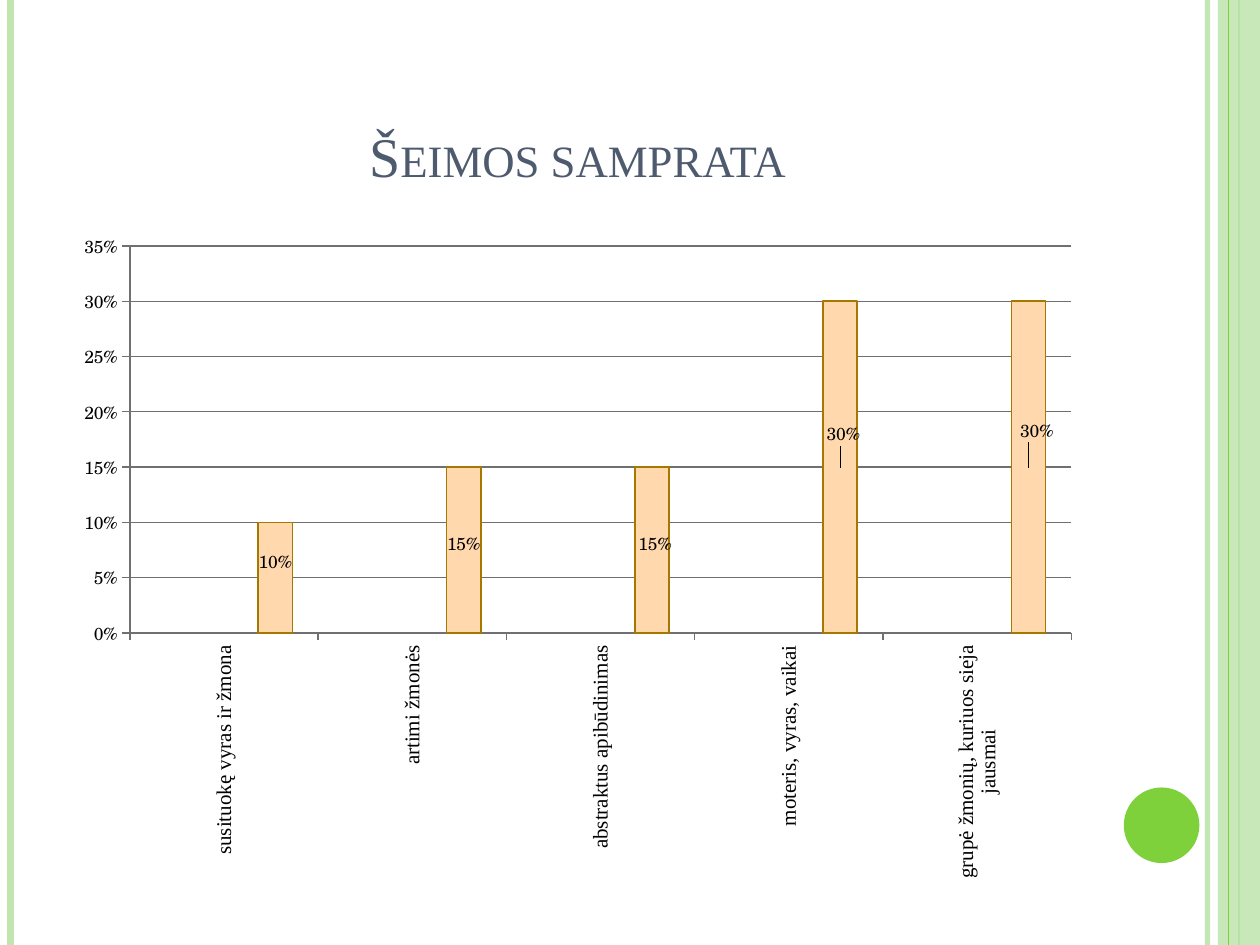
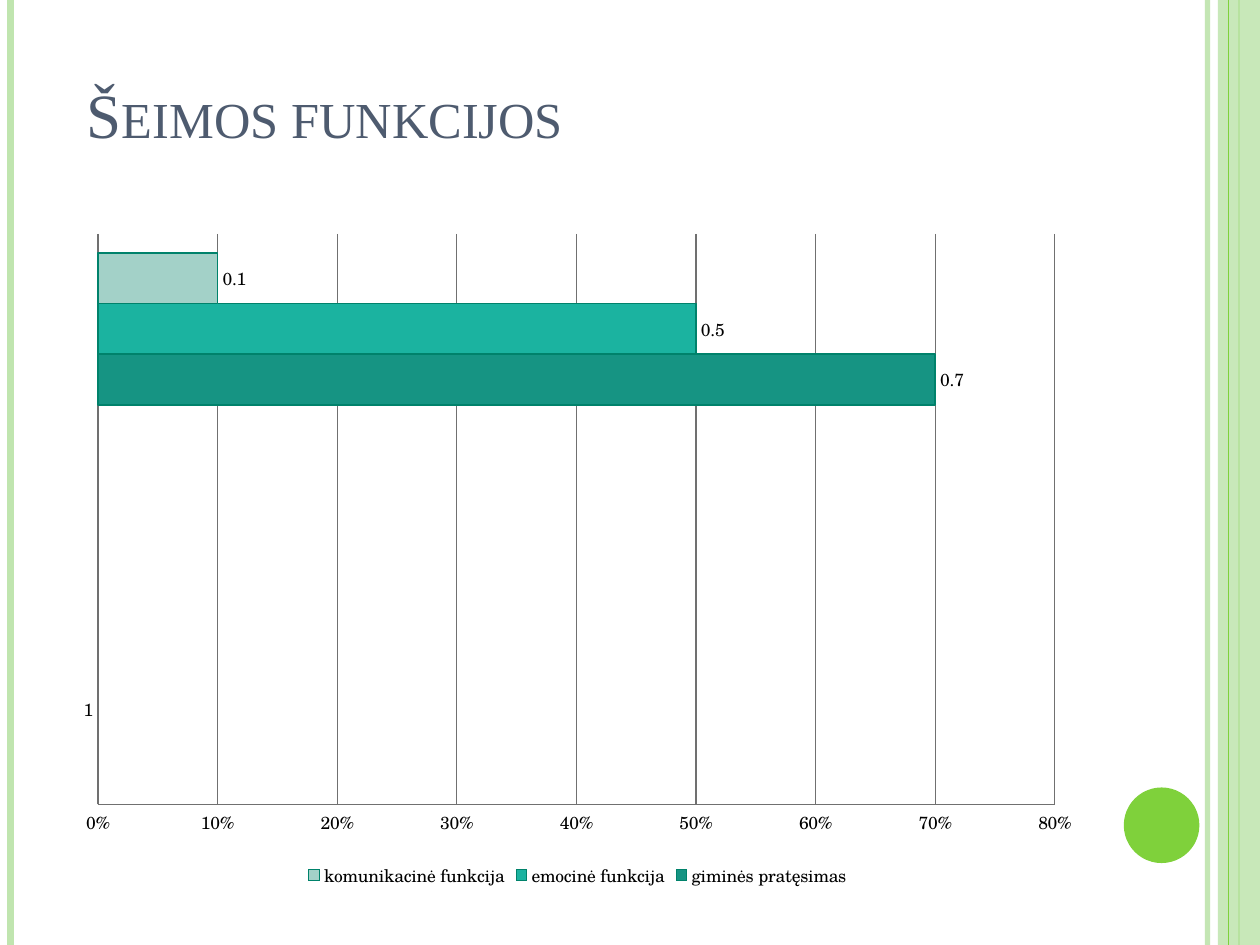
from lxml import etree
from pptx import Presentation
from pptx.chart.data import CategoryChartData
from pptx.dml.color import RGBColor
from pptx.enum.chart import XL_CHART_TYPE, XL_LABEL_POSITION, XL_LEGEND_POSITION, XL_TICK_MARK
from pptx.enum.shapes import MSO_CONNECTOR, MSO_SHAPE
from pptx.enum.text import MSO_ANCHOR, MSO_AUTO_SIZE, PP_ALIGN
from pptx.oxml.ns import qn
from pptx.util import Pt

COLUMNS, BARS = XL_CHART_TYPE.COLUMN_CLUSTERED, XL_CHART_TYPE.BAR_CLUSTERED
CENTER_LABEL, OUTER_LABEL = XL_LABEL_POSITION.CENTER, XL_LABEL_POSITION.OUTSIDE_END
BOTTOM_LEGEND = XL_LEGEND_POSITION.BOTTOM
NO_TICK, OUTER_TICK = XL_TICK_MARK.NONE, XL_TICK_MARK.OUTSIDE
STRAIGHT = MSO_CONNECTOR.STRAIGHT
RECTANGLE, OVAL = MSO_SHAPE.RECTANGLE, MSO_SHAPE.OVAL
BOTTOM, NO_FIT = MSO_ANCHOR.BOTTOM, MSO_AUTO_SIZE.NONE
LEFT, CENTER = PP_ALIGN.LEFT, PP_ALIGN.CENTER

COLORS = {
    "pale": "C0E5AF", "green": "7FD13B", "title": "4E5B6F", "text": "000000",
    "axis": "707070", "peach": "FFD8AD", "peach_edge": "A67800",
    "teal_dark": "169483", "teal": "1BB3A0", "teal_light": "A3D1C8",
    "teal_edge": "00826B",
}
TITLE_FONT, CHART_FONT = "Times New Roman", "TeX Gyre Schola"
PAGE_BOX = (0, 0, 720, 540)
CHART_BOX = (36, 126, 588, 384)


def color(name):
    return RGBColor.from_string(COLORS[name])


def apply(target, **values):
    for name, value in values.items():
        setattr(target, name, value)


def style_font(font, name, size, ink):
    apply(font, name=name, size=Pt(size))
    font.color.rgb = color(ink)


def style_line(line, ink, width):
    line.color.rgb = color(ink)
    line.width = Pt(width)


def set_alpha(item, percent):
    for tone in item._element.iter(qn("a:srgbClr")):
        etree.SubElement(tone, qn("a:alpha")).set("val", str(percent * 1000))


def add_stripe(page, x, top, height, ink, width, alpha=100):
    stripe = page.shapes.add_connector(STRAIGHT, Pt(x), Pt(top), Pt(x), Pt(top + height))
    style_line(stripe.line, ink, width)
    etree.SubElement(stripe._element.spPr, qn("a:effectLst"))
    if alpha < 100:
        set_alpha(stripe, alpha)


def add_panel(page, kind, box, ink):
    panel = page.shapes.add_shape(kind, *map(Pt, box))
    panel.shadow.inherit = False
    panel.fill.solid()
    panel.fill.fore_color.rgb = color(ink)
    panel.line.fill.background()
    return panel


def add_frame(page, box):
    left, top, width, height = box
    right = left + width
    add_stripe(page, right - 30, top, height, "pale", 3, 93)
    add_stripe(page, left + 6, top, height, "pale", 4.5)
    add_stripe(page, right - 12, top, height, "green", 1.5)
    set_alpha(add_panel(page, RECTANGLE, (right - 24, top, 24, height), "pale"), 87)
    add_stripe(page, right - 18, top, height, "green", 0.75)
    add_panel(page, OVAL, (right - 77.8, top + 450, 43.2, 43.2), "green")


def add_title(page, box, text, size, align):
    title = page.shapes.title
    left, top, width, height = map(Pt, box)
    apply(title, left=left, top=top, width=width, height=height)
    apply(title.text_frame, word_wrap=True, auto_size=NO_FIT, vertical_anchor=BOTTOM)
    para = title.text_frame.paragraphs[0]
    para.alignment = align
    span = para.add_run()
    span.text = text
    style_font(span.font, TITLE_FONT, size, "title")
    span._r.get_or_add_rPr().set("cap", "small")


def make_layout(inner, **parts):
    layout = etree.Element(qn("c:layout"))
    manual = etree.SubElement(layout, qn("c:manualLayout"))
    if inner:
        parts = {"layoutTarget": "inner", "xMode": "edge", "yMode": "edge", **parts}
    for name, value in parts.items():
        etree.SubElement(manual, qn(f"c:{name}")).set("val", str(value))
    return layout


def add_chart(page, box, kind, categories, series, plot_box, gap, tick, edge):
    data = CategoryChartData(number_format="General")
    data.categories = categories
    for name, values, _ in series:
        data.add_series(name, values)
    chart = page.shapes.add_chart(kind, *map(Pt, box), data).chart
    apply(chart, has_title=False, has_legend=False)
    style_font(chart.font, CHART_FONT, 10, "text")
    plot = chart.plots[0]
    apply(plot, gap_width=gap, overlap=0, vary_by_categories=False)

    area = chart._chartSpace.chart.plotArea
    for layout in area.findall(qn("c:layout")):
        area.remove(layout)
    area.insert(0, make_layout(True, **dict(zip("xywh", plot_box))))

    for axis in (chart.category_axis, chart.value_axis):
        apply(axis, major_tick_mark=tick, minor_tick_mark=NO_TICK)
        style_line(axis.format.line, "axis", 0.75)
    values_axis = chart.value_axis
    values_axis.minimum_scale = 0
    values_axis.has_major_gridlines = True
    style_line(values_axis.major_gridlines.format.line, "axis", 0.75)
    apply(values_axis.tick_labels, number_format="0%", number_format_is_linked=False)

    for bars, (_, _, ink) in zip(plot.series, series):
        bars.format.fill.solid()
        bars.format.fill.fore_color.rgb = color(ink)
        style_line(bars.format.line, edge, 1)
        bars.invert_if_negative = False
    return chart


def show_values(bars, number_format, position):
    labels = bars.data_labels
    apply(labels, show_value=True, number_format=number_format,
          number_format_is_linked=False, position=position)
    style_font(labels.font, CHART_FONT, 10, "text")


def hide_leader_lines(bars):
    labels = bars._element.find(qn("c:dLbls"))
    for leader in labels.findall(qn("c:showLeaderLines")):
        labels.remove(leader)
    space = "http://schemas.microsoft.com/office/drawing/2012/chart"
    extensions = etree.SubElement(labels, qn("c:extLst"))
    extension = etree.SubElement(extensions, qn("c:ext"), nsmap={"c15": space},
                                 uri="{CE6537A1-D6FC-4f65-9D91-7224C49458BB}")
    etree.SubElement(extension, f"{{{space}}}showLeaderLines").set("val", "0")


def add_concept_chart(page, box):
    categories = ["susituokę vyras ir žmona", "artimi žmonės", "abstraktus apibūdinimas",
                  "moteris, vyras, vaikai", "grupė žmonių, kuriuos sieja\njausmai"]
    series = [(f"Series {number}", [None] * 5, "peach") for number in (1, 2, 3)]
    series.append(("Series 4", [0.1, 0.15, 0.15, 0.3, 0.3], "peach"))
    chart = add_chart(page, box, COLUMNS, categories, series,
                      (0.065, 0.038, 0.915, 0.576), 150, OUTER_TICK, "peach_edge")
    apply(chart.value_axis, maximum_scale=0.35, major_unit=0.05)
    tick_labels = chart.category_axis.tick_labels
    style_font(tick_labels.font, TITLE_FONT, 12, "text")
    body = chart.category_axis._element.find(qn("c:txPr")).find(qn("a:bodyPr"))
    body.set("rot", "-5400000")
    body.set("vert", "horz")

    bars = chart.plots[0].series[3]
    show_values(bars, "0%", CENTER_LABEL)
    shifts = [(0, -0.024), (0, -0.01), (0.003, -0.01), (0.003, -0.05), (0.008, -0.055)]
    for index in range(len(shifts)):
        bars.points[index].data_label.position = CENTER_LABEL
    for label, (across, down) in zip(bars._element.iter(qn("c:dLbl")), shifts):
        layout = make_layout(False, x=across, y=down)
        label.find(qn("c:idx")).addnext(layout)
        layout.addnext(etree.Element(qn("c:numFmt"), formatCode="0%", sourceLinked="0"))
    hide_leader_lines(bars)


def add_function_chart(page, box):
    series = [
        ("giminės pratęsimas", [None, None, 0.7], "teal_dark"),
        ("emocinė funkcija", [None, None, 0.5], "teal"),
        ("komunikacinė funkcija", [None, None, 0.1], "teal_light"),
    ]
    chart = add_chart(page, box, BARS, ["1", "", ""], series,
                      (0.034, 0.02, 0.93, 0.849), 75, NO_TICK, "teal_edge")
    apply(chart.value_axis, maximum_scale=0.8, major_unit=0.1)
    for bars in chart.plots[0].series:
        show_values(bars, "General", OUTER_LABEL)
    chart.has_legend = True
    apply(chart.legend, position=BOTTOM_LEGEND, include_in_layout=False)
    style_font(chart.legend.font, CHART_FONT, 10, "text")


def add_page(deck, title_box, title, size, align, draw_chart):
    page = deck.slides.add_slide(deck.slide_layouts[5])
    add_frame(page, PAGE_BOX)
    add_title(page, title_box, title, size, align)
    draw_chart(page, CHART_BOX)


def main():
    deck = Presentation()
    apply(deck, slide_width=Pt(PAGE_BOX[2]), slide_height=Pt(PAGE_BOX[3]))
    add_page(deck, (36, 21.6, 588, 90), "Šeimos samprata", 32, CENTER, add_concept_chart)
    add_page(deck, (42.5, 0, 588, 90), "Šeimos funkcijos", 36, LEFT, add_function_chart)
    deck.save("out.pptx")


if __name__ == "__main__":
    main()
